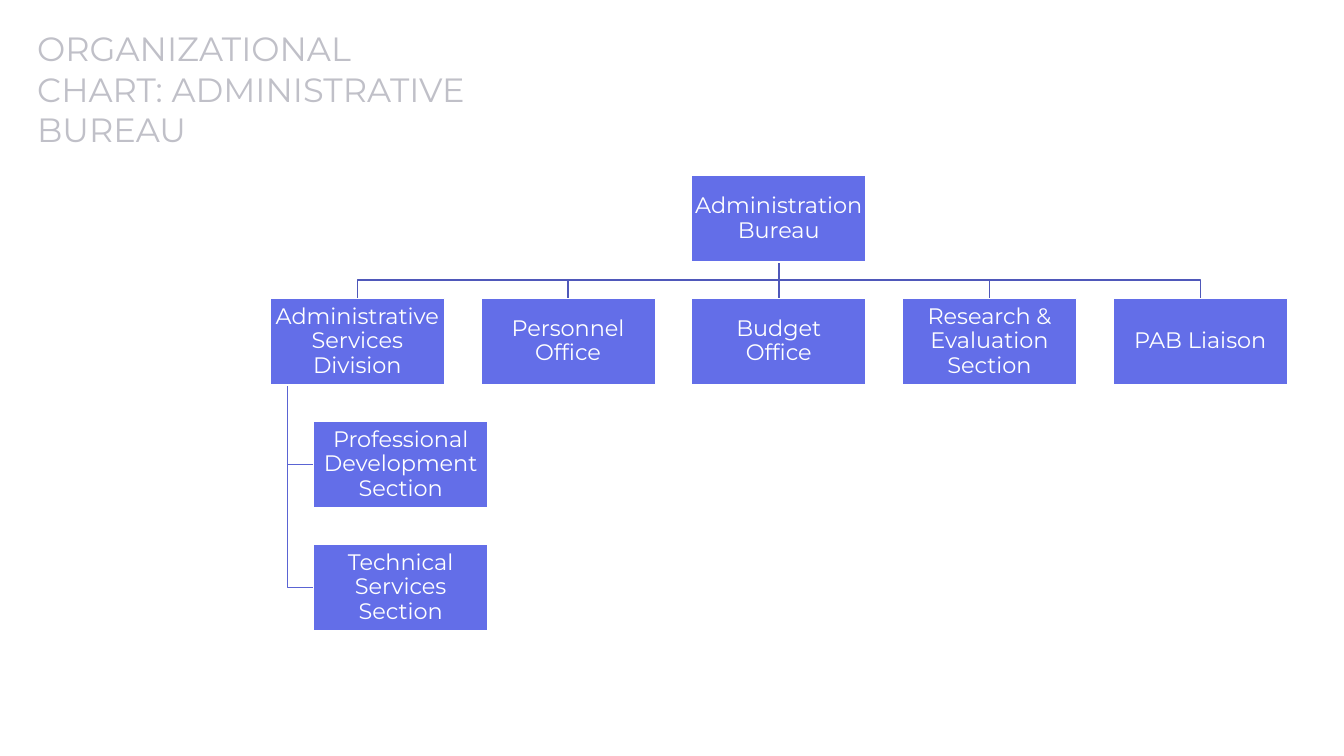
"""Build the organizational chart slide of the Administrative Bureau."""
from copy import deepcopy

from lxml import etree
from pptx import Presentation
from pptx.dml.color import RGBColor
from pptx.enum.shapes import MSO_CONNECTOR, MSO_SHAPE
from pptx.enum.text import MSO_ANCHOR, PP_ALIGN
from pptx.oxml.ns import qn
from pptx.util import Inches, Pt

STRAIGHT = MSO_CONNECTOR.STRAIGHT
RECTANGLE = MSO_SHAPE.RECTANGLE
MIDDLE = MSO_ANCHOR.MIDDLE
CENTER = PP_ALIGN.CENTER

COLORS = {
    "title": "C0C0C8",
    "box": "636EE8",
    "white": "FFFFFF",
    "office_line": "4F58BA",
    "section_line": "5A64D3",
}
BOX_WIDTH, BOX_HEIGHT = 1.73, 0.86
BUREAU_LEFT, BUREAU_TOP = 6.86, 1.74
OFFICE_LEFT, OFFICE_STEP = 2.68, 2.09
LEVEL_STEP = 1.22
SECTION_LEFT, TRUNK_X = 3.11, 2.85
OFFICES = [
    "Administrative Services\nDivision",
    "Personnel\nOffice",
    "Budget\nOffice",
    "Research & Evaluation\nSection",
    "PAB Liaison",
]
SECTIONS = ["Professional Development\nSection", "Technical Services\nSection"]


def write(frame, text, size, color):
    """Fill a frame with one paragraph whose runs and breaks share a format."""
    frame.word_wrap = True
    paragraph = frame.paragraphs[0]
    paragraph.text = text
    font_format = {"name": "Montserrat", "size": Pt(size)}
    for run in paragraph.runs:
        for attribute, value in font_format.items():
            setattr(run.font, attribute, value)
        run.font.color.rgb = RGBColor.from_string(COLORS[color])
    for line_break in paragraph._p.findall(qn("a:br")):
        line_break.insert(0, deepcopy(paragraph.runs[0]._r.rPr))
    return paragraph


def link(points, color):
    """Draw an open line through points given in inches."""
    corners = [(Inches(x), Inches(y)) for x, y in points]
    if len(corners) == 2:
        line = slide.shapes.add_connector(STRAIGHT, *corners[0], *corners[1])
        etree.SubElement(line._element.spPr, qn("a:effectLst"))
    else:
        builder = slide.shapes.build_freeform(*corners[0])
        builder.add_line_segments(corners[1:], close=False)
        line = builder.convert_to_shape()
        line.fill.background()
        line.shadow.inherit = False
    line.line.color.rgb = RGBColor.from_string(COLORS[color])
    line.line.width = Pt(1)


presentation = Presentation()
presentation.slide_width = Inches(13.33)
presentation.slide_height = Inches(7.5)
slide = presentation.slides.add_slide(presentation.slide_layouts[6])

title = slide.shapes.add_textbox(Inches(0.27), Inches(0.23), Inches(4.67), Inches(1.31))
write(title.text_frame, "ORGANIZATIONAL\nCHART: ADMINISTRATIVE BUREAU", 24, "title")

office_top = BUREAU_TOP + LEVEL_STEP
boxes = [("Administration\nBureau", BUREAU_LEFT, BUREAU_TOP)]

bureau_x = BUREAU_LEFT + BOX_WIDTH / 2
bureau_bottom = BUREAU_TOP + BOX_HEIGHT
rail_y = (bureau_bottom + office_top) / 2
for column, office in enumerate(OFFICES):
    office_left = OFFICE_LEFT + column * OFFICE_STEP
    office_x = office_left + BOX_WIDTH / 2
    boxes.append((office, office_left, office_top))
    bends = [(bureau_x, rail_y), (office_x, rail_y)] if office_left != BUREAU_LEFT else []
    link([(bureau_x, bureau_bottom), *bends, (office_x, office_top)], "office_line")

for row, section in enumerate(SECTIONS, start=1):
    section_top = office_top + row * LEVEL_STEP
    section_y = section_top + BOX_HEIGHT / 2
    boxes.append((section, SECTION_LEFT, section_top))
    link(
        [(TRUNK_X, office_top + BOX_HEIGHT), (TRUNK_X, section_y), (SECTION_LEFT, section_y)],
        "section_line",
    )

for label, left, top in boxes:
    box = slide.shapes.add_shape(
        RECTANGLE, Inches(left), Inches(top), Inches(BOX_WIDTH), Inches(BOX_HEIGHT)
    )
    box.shadow.inherit = False
    box.fill.solid()
    box.fill.fore_color.rgb = RGBColor.from_string(COLORS["box"])
    box.line.color.rgb = RGBColor.from_string(COLORS["white"])
    box.line.width = Pt(1)
    frame = box.text_frame
    for side in ("left", "right", "top", "bottom"):
        setattr(frame, f"margin_{side}", Inches(0.01))
    frame.vertical_anchor = MIDDLE
    name = write(frame, label, 16, "white")
    name.alignment = CENTER
    name.line_spacing = 0.9

presentation.save("out.pptx")
